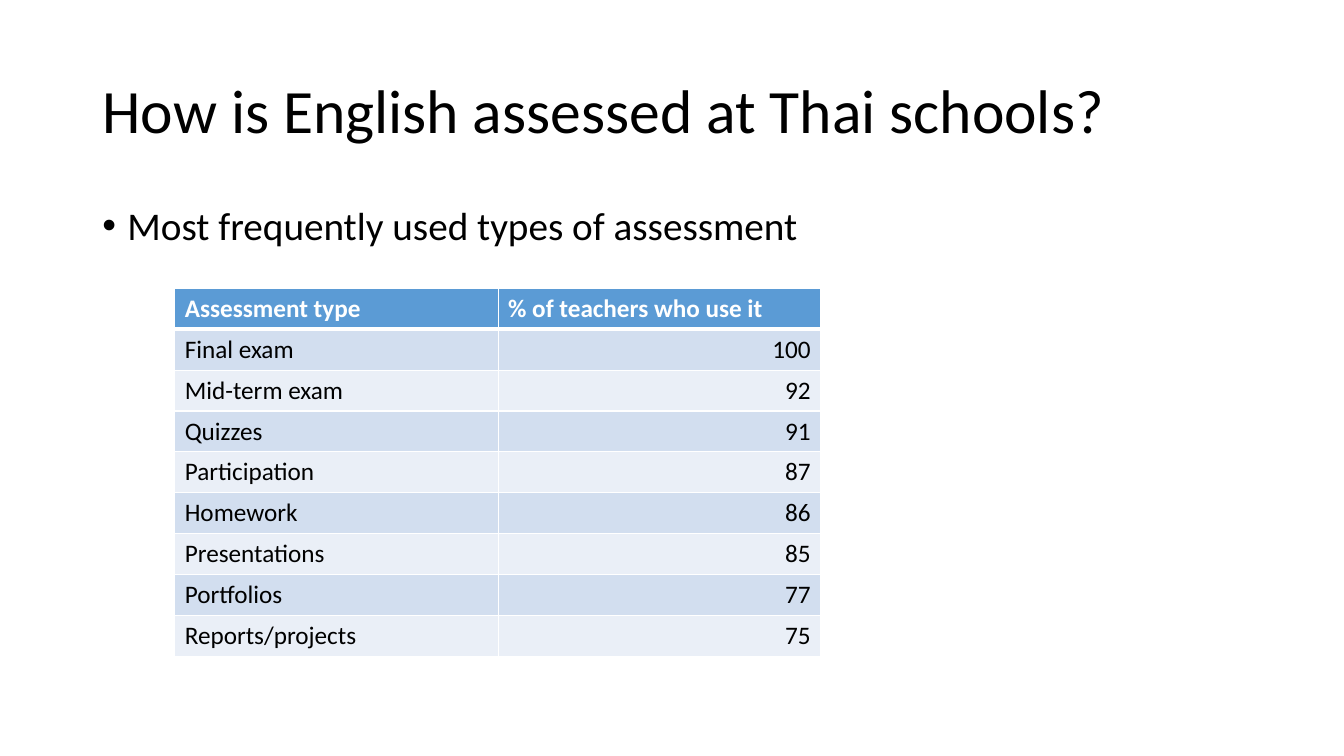
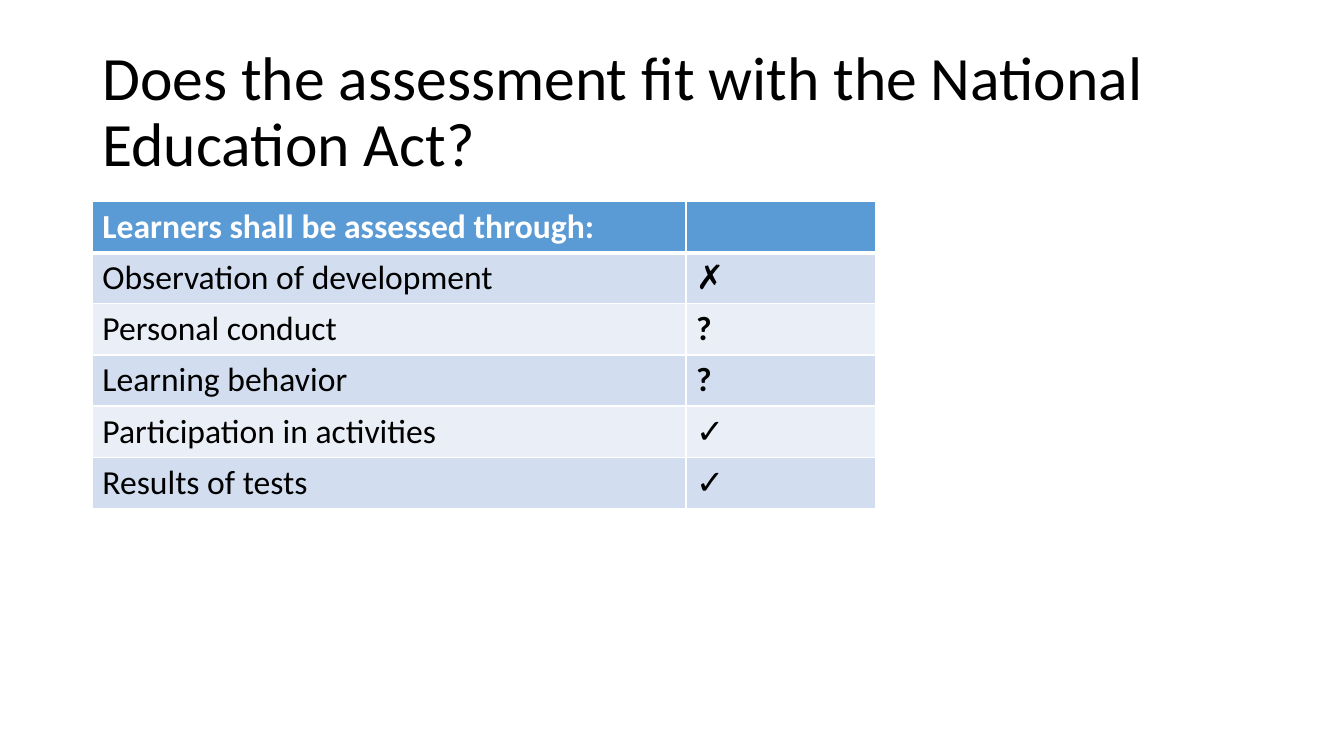
from dataclasses import dataclass

from lxml.etree import SubElement
from pptx import Presentation
from pptx.dml.color import RGBColor
from pptx.enum.text import MSO_ANCHOR, MSO_AUTO_SIZE, PP_ALIGN
from pptx.oxml.ns import qn
from pptx.util import Pt

FONT = "Calibri"
COLORS = {
    "text": "000000",
    "light": "FFFFFF",
    "head": "5B9BD5",
    "odd": "D2DEEF",
    "even": "EAEFF7",
}
LEFT, WIDTH = 66, 828


@dataclass
class Grid:
    """A banded table; lengths in points."""
    left: float
    top: float
    cols: tuple[float, ...]
    row: float
    size: float
    rows: list[tuple[str, ...]]
    align: PP_ALIGN = PP_ALIGN.LEFT  # body cells of the last column


EXAMS = Grid(124.8, 206, (231, 230.5), 29.2, 18, [
    ("Assessment type", "% of teachers who use it"),
    ("Final exam", "100"),
    ("Mid-term exam", "92"),
    ("Quizzes", "91"),
    ("Participation", "87"),
    ("Homework", "86"),
    ("Presentations", "85"),
    ("Portfolios", "77"),
    ("Reports/projects", "75"),
], PP_ALIGN.RIGHT)

RULES = Grid(LEFT, 144, (424, 135.4), 36, 24, [
    ("Learners shall be assessed through:", ""),
    ("Observation of development", "✗"),
    ("Personal conduct", "?"),
    ("Learning behavior", "?"),
    ("Participation in activities", "✓"),
    ("Results of tests", "✓"),
])


def add_run(para, text: str, size: float, color: str = "text",
            bold: bool = False) -> None:
    run = para.add_run()
    run.text = text
    font = run.font
    font.name, font.size, font.bold = FONT, Pt(size), bold
    font.color.rgb = RGBColor.from_string(COLORS[color])


def place(shape, top: float, height: float) -> None:
    shape.left, shape.top = Pt(LEFT), Pt(top)
    shape.width, shape.height = Pt(WIDTH), Pt(height)


def add_page(deck, title: str):
    """Add a slide with the shared title style."""
    page = deck.slides.add_slide(deck.slide_layouts[5])
    shape = page.shapes.title
    place(shape, 28.8, 104.4)
    frame = shape.text_frame
    frame.word_wrap = True
    frame.auto_size = MSO_AUTO_SIZE.NONE
    frame.vertical_anchor = MSO_ANCHOR.MIDDLE
    para = frame.paragraphs[0]
    para.alignment = PP_ALIGN.LEFT
    para.line_spacing = 0.9
    add_run(para, title, 44)
    return page


def add_point(page, text: str) -> None:
    """Add the bulleted body text."""
    box = page.shapes.add_textbox(0, 0, 0, 0)
    place(box, 144, 342.7)
    frame = box.text_frame
    frame.word_wrap = True
    para = frame.paragraphs[0]
    para.line_spacing = 0.9
    para.space_before = Pt(10)
    add_run(para, text, 28)
    props = para._p.get_or_add_pPr()
    props.set("marL", str(Pt(18)))
    props.set("indent", str(Pt(-18)))
    SubElement(props, qn("a:buFont"), typeface="Arial")
    SubElement(props, qn("a:buChar"), char="•")


def add_edges(cell, top: float, bottom: float) -> None:
    """Draw white cell borders; must run before the fill is set."""
    props = cell._tc.get_or_add_tcPr()
    for side, width in zip("LRTB", (1, 1, top, bottom)):
        line = SubElement(props, qn(f"a:ln{side}"), w=str(Pt(width)))
        fill = SubElement(line, qn("a:solidFill"))
        SubElement(fill, qn("a:srgbClr"), val=COLORS["light"])


def add_grid(page, grid: Grid) -> None:
    count = len(grid.rows)
    table = page.shapes.add_table(
        count, len(grid.cols), Pt(grid.left), Pt(grid.top),
        Pt(sum(grid.cols)), Pt(grid.row * count)).table
    for col, width in zip(table.columns, grid.cols):
        col.width = Pt(width)
    for r, texts in enumerate(grid.rows):
        table.rows[r].height = Pt(grid.row)
        head = r == 0
        band = "head" if head else "odd" if r % 2 else "even"
        for c, text in enumerate(texts):
            cell = table.cell(r, c)
            # A thick rule parts the header from the body
            add_edges(cell, 3 if r == 1 else 1, 3 if head else 1)
            cell.fill.solid()
            cell.fill.fore_color.rgb = RGBColor.from_string(COLORS[band])
            para = cell.text_frame.paragraphs[0]
            last = c == len(texts) - 1
            para.alignment = grid.align if last and not head else PP_ALIGN.LEFT
            if text:
                add_run(para, text, grid.size, "light" if head else "text",
                        head or text == "?")


def main() -> None:
    deck = Presentation()
    deck.slide_width, deck.slide_height = Pt(960), Pt(540)

    # Types of assessment
    page = add_page(deck, "How is English assessed at Thai schools?")
    add_point(page, "Most frequently used types of assessment")
    add_grid(page, EXAMS)

    # Fit with the law
    page = add_page(
        deck, "Does the assessment fit with the National Education Act?")
    add_grid(page, RULES)

    deck.save("out.pptx")


if __name__ == "__main__":
    main()
